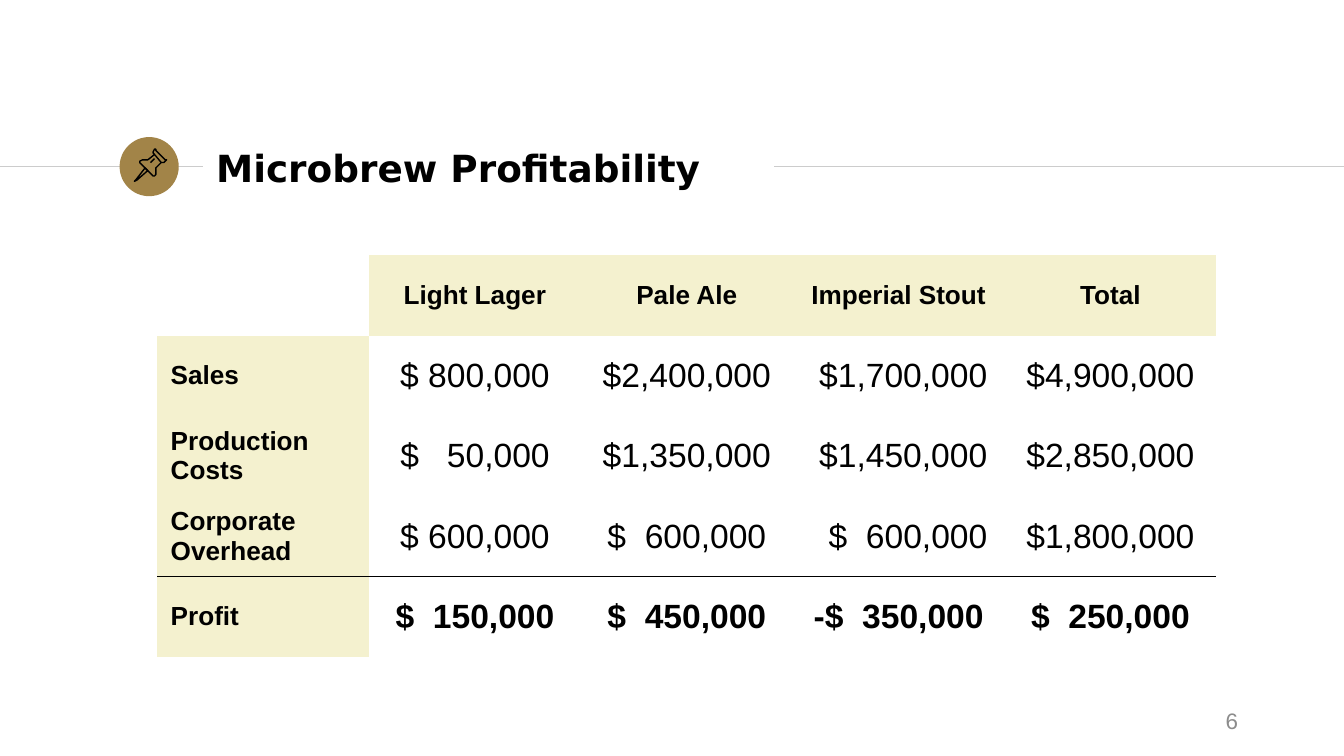
"""Build the microbrew profitability slide."""
from lxml import etree
from pptx import Presentation
from pptx import util as u
from pptx.dml.color import RGBColor
from pptx.enum import shapes, text
from pptx.oxml.ns import qn

BLACK = RGBColor(0x00, 0x00, 0x00)
RULE = RGBColor(0xCC, 0xCC, 0xCC)
GOLD = RGBColor(0xA2, 0x84, 0x48)
CREAM = RGBColor(0xF4, 0xF1, 0xCF)
GRAY = RGBColor(0x8C, 0x8C, 0x8C)
NO_STYLE = "{2D5ABB26-0587-4C30-8999-92F81FD0307C}"

HEADERS = ["", "Light Lager", "Pale Ale", "Imperial Stout", "Total"]
ROWS = [
    ["Sales", "$ 800,000", "$2,400,000", "$1,700,000", "$4,900,000"],
    ["Production Costs", "$ 50,000", "$1,350,000", "$1,450,000", "$2,850,000"],
    ["Corporate Overhead", "$ 600,000", "$ 600,000", "$ 600,000", "$1,800,000"],
    ["Profit", "$ 150,000", "$ 450,000", "-$ 350,000", "$ 250,000"],
]
GAPS = [[0, 0, 0, 0], [10, 0, 0, 0], [0, 5, 5, 0], [5, 5, 5, 5]]
STOUT_INSETS = {1: 0.17, 2: 0.17, 3: 0.24}

PIN = [
    ([(108, 125), (101, 134), (100, 135), (102, 134), (110, 127)], True),
    ([(115, 115), (120, 121), (122, 121), (123, 120), (124, 119), (123, 119),
      (116, 112), (116, 111), (115, 111), (114, 113), (114, 114)], True),
    ([(115, 115), (110, 119), (108, 119), (106, 119), (104, 120), (104, 121),
      (114, 131), (115, 131), (116, 130), (116, 128), (116, 125), (120, 121)], False),
    ([(112, 121), (115, 118)], False),
]


def style(p, size, color=BLACK, bold=False, name="Arial", align=text.PP_ALIGN.LEFT):
    p.alignment = align
    p.font.size = u.Pt(size)
    p.font.bold = bold
    p.font.name = name
    p.font.color.rgb = color


def add_border(cell, side):
    ln = etree.Element(qn(f"a:{side}"), w=str(u.Pt(1)))
    fill = etree.SubElement(ln, qn("a:solidFill"))
    etree.SubElement(fill, qn("a:srgbClr"), val=str(BLACK))
    cell._tc.get_or_add_tcPr().insert(0, ln)


prs = Presentation()
prs.slide_width = u.Inches(10)
prs.slide_height = u.Inches(10) * 9 // 16
s = prs.slides.add_slide(prs.slide_layouts[6])

for left, right in [(0, 1.51), (5.76, 10)]:
    sp = s.shapes.add_connector(shapes.MSO_CONNECTOR.STRAIGHT, u.Inches(left),
                                u.Inches(1.24), u.Inches(right), u.Inches(1.24))
    sp.line.color.rgb = RULE
    sp.line.width = u.Pt(0.75)
    etree.SubElement(sp._element.spPr, qn("a:effectLst"))

sp = s.shapes.add_shape(shapes.MSO_SHAPE.OVAL, u.Inches(0.89), u.Inches(1.02),
                        u.Inches(0.44), u.Inches(0.44))
sp.shadow.inherit = False
sp.fill.solid()
sp.fill.fore_color.rgb = GOLD
sp.line.fill.background()

for points, closed in PIN:
    builder = s.shapes.build_freeform(*points[0], scale=u.Inches(0.01))
    builder.add_line_segments(points[1:], close=closed)
    sp = builder.convert_to_shape()
    sp.shadow.inherit = False
    sp.fill.background()
    sp.line.color.rgb = BLACK
    sp.line.width = u.Pt(0.75)

sp = s.shapes.add_textbox(u.Inches(1.51), u.Inches(1.01), u.Inches(4.24), u.Inches(0.48))
tf = sp.text_frame
tf.word_wrap = True
tf.vertical_anchor = text.MSO_ANCHOR.MIDDLE
tf.margin_top = tf.margin_bottom = u.Inches(0.1)
tf.text = "Microbrew Profitability"
style(tf.paragraphs[0], 20, bold=True, name="DejaVu Sans")

sp = s.shapes.add_textbox(u.Inches(7.06), u.Inches(5.21), u.Inches(2.25), u.Inches(0.3))
tf = sp.text_frame
tf.word_wrap = True
tf.vertical_anchor = text.MSO_ANCHOR.MIDDLE
tf.text = "6"
style(tf.paragraphs[0], 12, GRAY, align=text.PP_ALIGN.RIGHT)

table = s.shapes.add_table(5, 5, u.Inches(1.17), u.Inches(1.9),
                           u.Inches(7.88), u.Inches(2.99)).table
table.first_row = table.horz_banding = False
table._tbl.tblPr.find(qn("a:tableStyleId")).text = NO_STYLE

for i, row in enumerate([HEADERS] + ROWS):
    for j, value in enumerate(row):
        cell = table.cell(i, j)
        cell.vertical_anchor = text.MSO_ANCHOR.MIDDLE
        p = cell.text_frame.paragraphs[0]
        is_label = i == 0 or j == 0
        align = text.PP_ALIGN.CENTER if j else text.PP_ALIGN.LEFT
        style(p, 14 if is_label else 18, bold=is_label or i == 4, align=align)
        if is_label and value:
            cell.fill.solid()
            cell.fill.fore_color.rgb = CREAM
        else:
            cell.fill.background()
        gap = 0 if is_label else GAPS[i - 1][j - 1]
        parts = value.partition(" ") if gap else [value]
        for part in parts:
            r = p.add_run()
            r.text = part
            if part == " ":
                r._r.get_or_add_rPr().set("spc", str(gap * 100))
        if j == 3 and i in STOUT_INSETS:
            cell.margin_left = u.Inches(STOUT_INSETS[i])
        if i in (3, 4):
            add_border(cell, "lnB" if i == 3 else "lnT")

prs.save("out.pptx")
